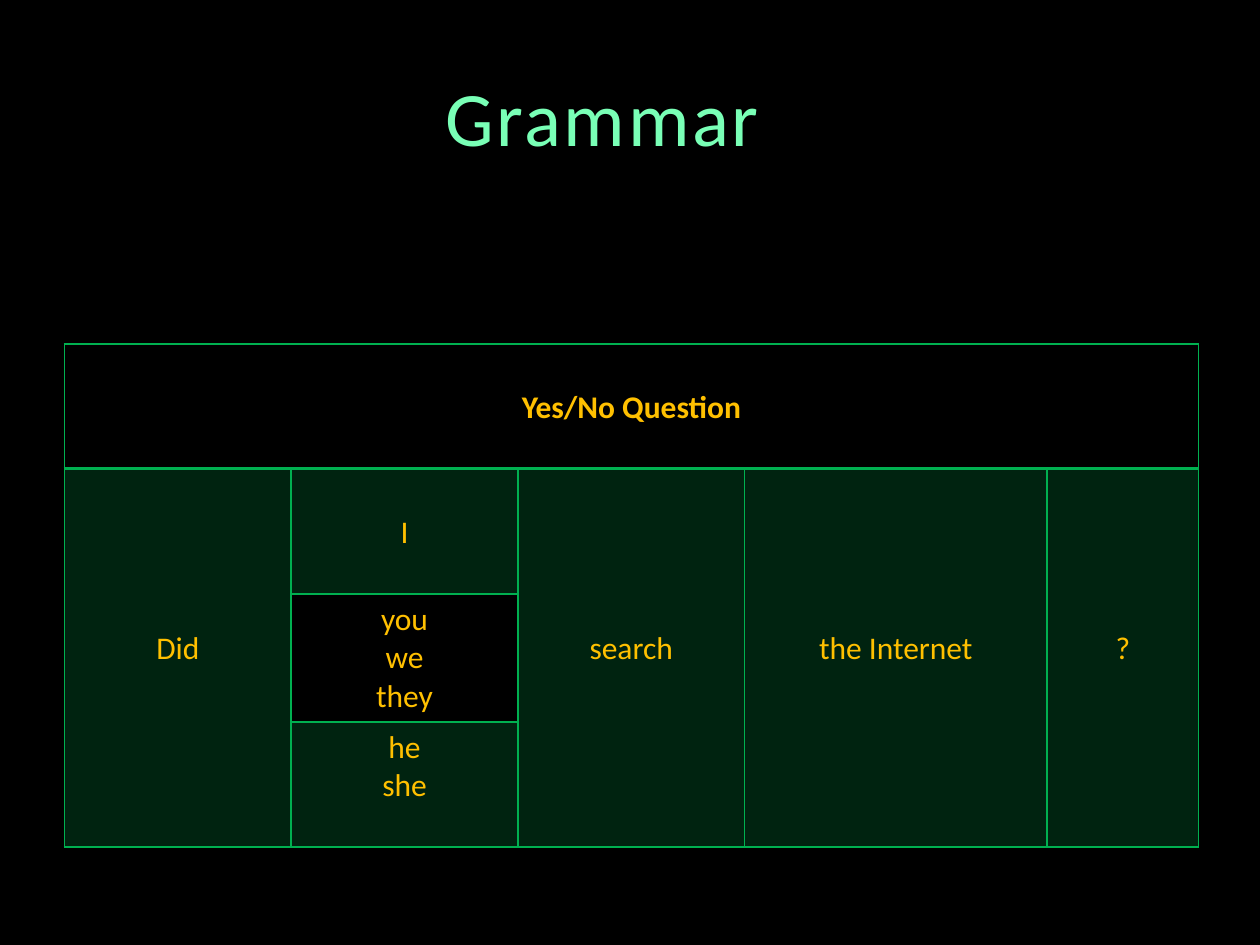
from lxml import etree
from pptx import Presentation
from pptx.dml.color import RGBColor
from pptx.enum.text import MSO_ANCHOR, PP_ALIGN
from pptx.oxml.ns import qn
from pptx.util import Cm, Pt

CENTER = PP_ALIGN.CENTER
MIDDLE = MSO_ANCHOR.MIDDLE
TOP = MSO_ANCHOR.TOP

BLACK = RGBColor(0x00, 0x00, 0x00)
GREEN = RGBColor(0x00, 0xB0, 0x50)
MINT = RGBColor(0x79, 0xFF, 0xB6)
AMBER = RGBColor(0xFF, 0xC0, 0x00)

TITLE_ONLY = 5
COLUMN_WIDTHS = [4.57, 4.57, 4.57, 6.1, 3.05]
ROW_HEIGHTS = [2.52, 2.52, 2.58, 2.52]
CELL_MARGIN = 0.13
LINE_HEIGHT = 0.775


class GrammarSlide:
    font_name = "Calibri"
    text_size = Pt(18)

    def __init__(self, presentation):
        self.slide = presentation.slides.add_slide(
            presentation.slide_layouts[TITLE_ONLY])
        background = self.slide.background.fill
        background.solid()
        background.fore_color.rgb = BLACK

    def style(self, paragraph, size, color, bold=False):
        paragraph.alignment = CENTER
        paragraph.font.name = self.font_name
        paragraph.font.size = size
        paragraph.font.bold = bold
        paragraph.font.color.rgb = color

    def title(self, text, left, top, width, height):
        shape = self.slide.shapes.title
        shape.left, shape.top = Cm(left), Cm(top)
        shape.width, shape.height = Cm(width), Cm(height)
        shape.text_frame.vertical_anchor = MIDDLE
        paragraph = shape.text_frame.paragraphs[0]
        run = paragraph.add_run()
        run.text = text
        run.font._element.set("spc", "150")
        self.style(paragraph, Pt(44), MINT)

    def table(self, left, top, widths, heights):
        table = self.slide.shapes.add_table(
            len(heights), len(widths), Cm(left), Cm(top),
            Cm(sum(widths)), Cm(sum(heights))).table
        for column, width in zip(table.columns, widths):
            column.width = Cm(width)
        for row, height in zip(table.rows, heights):
            row.height = Cm(height)
        return table

    def cell_text(self, cell, text, lines_above=0, bold=False):
        cell.vertical_anchor = TOP
        cell.margin_top = Cm(CELL_MARGIN + lines_above * LINE_HEIGHT)
        cell.text_frame.text = text
        for paragraph in cell.text_frame.paragraphs:
            self.style(paragraph, self.text_size, AMBER, bold)

    def cell_look(self, cell, tinted, top_width=1, bottom_width=1):
        if tinted:
            cell.fill.solid()
            cell.fill.fore_color.rgb = GREEN
        else:
            cell.fill.background()
        properties = cell._tc.get_or_add_tcPr()
        for color in properties.iter(qn("a:srgbClr")):
            etree.SubElement(color, qn("a:alpha"), val="20000")
        # Borders come before the fill
        edges = {"lnL": 1, "lnR": 1, "lnT": top_width, "lnB": bottom_width}
        for position, (edge, width) in enumerate(edges.items()):
            line = etree.Element(qn(f"a:{edge}"), w=str(Pt(width)))
            fill = etree.SubElement(line, qn("a:solidFill"))
            etree.SubElement(fill, qn("a:srgbClr"), val=str(GREEN))
            properties.insert(position, line)


def main():
    presentation = Presentation()
    presentation.slide_width, presentation.slide_height = Cm(25.4), Cm(19.05)
    grammar = GrammarSlide(presentation)
    grammar.title("Grammar", 0.71, 0.74, 22.86, 3.18)

    # Grid: plain header, tinted body, plain middle pronoun cell
    table = grammar.table(1.3, 6.93, COLUMN_WIDTHS, ROW_HEIGHTS)
    for row in range(len(ROW_HEIGHTS)):
        for column in range(len(COLUMN_WIDTHS)):
            grammar.cell_look(
                table.cell(row, column),
                tinted=row > 0 and (row, column) != (2, 1),
                top_width=2 if row == 1 else 1,
                bottom_width=2 if row == 0 else 1)

    # Header across all columns
    table.cell(0, 0).merge(table.cell(0, 4))
    grammar.cell_text(table.cell(0, 0), "Yes/No Question", 1, bold=True)

    # Sentence parts that span the body rows
    parts = {0: "Did", 2: "search", 3: "the Internet", 4: "?"}
    for column, text in parts.items():
        table.cell(1, column).merge(table.cell(3, column))
        grammar.cell_text(table.cell(1, column), text, 4)

    # Pronouns
    pronouns = [("I", 1), ("you\nwe\nthey", 0), ("he\nshe", 0)]
    for row, (text, lines_above) in enumerate(pronouns, start=1):
        grammar.cell_text(table.cell(row, 1), text, lines_above)

    presentation.save("out.pptx")


if __name__ == "__main__":
    main()
